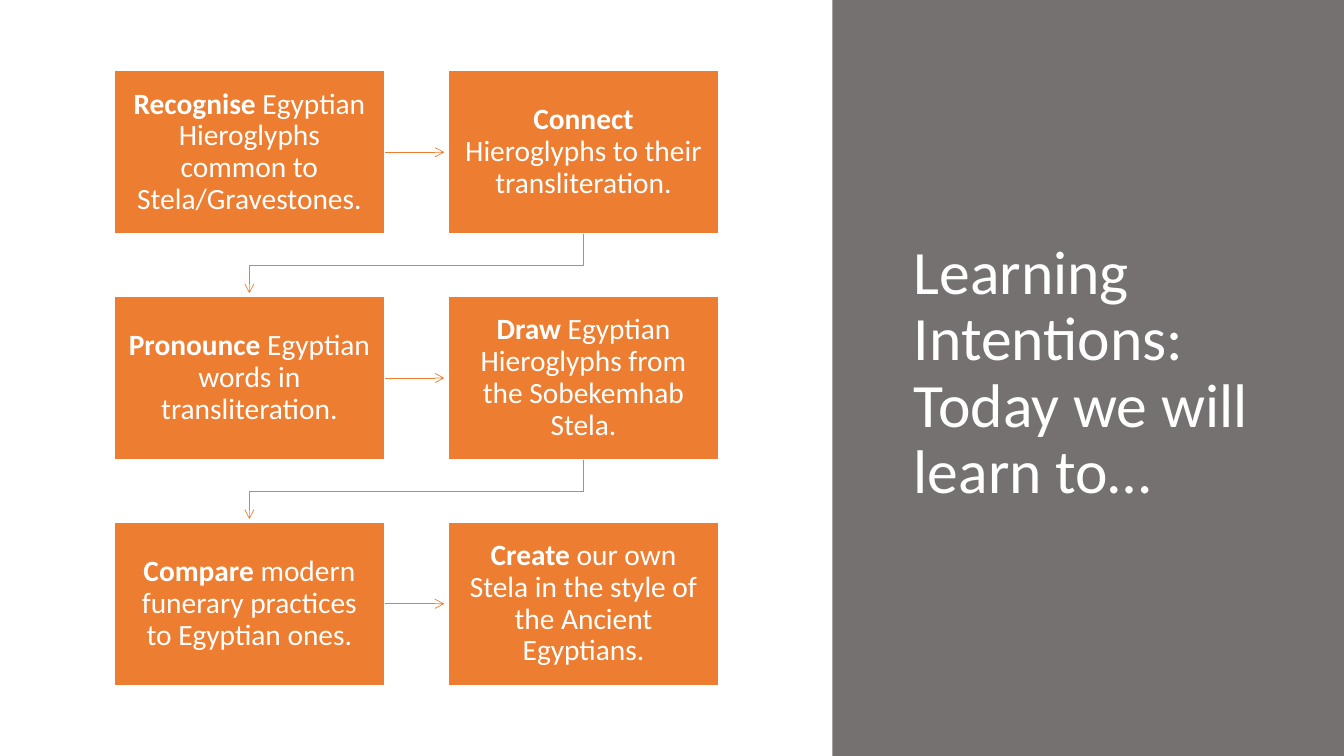
from lxml import etree
from pptx import Presentation, util as u
from pptx.dml import color
from pptx.enum import shapes, text
from pptx.oxml import ns

TITLE = "Learning Intentions: Today we will learn to…"
STEPS = [
    ("Recognise", " Egyptian Hieroglyphs common to Stela/Gravestones."),
    ("Connect", " Hieroglyphs to their transliteration."),
    ("Pronounce", " Egyptian words in transliteration."),
    ("Draw", " Egyptian Hieroglyphs from the Sobekemhab Stela."),
    ("Compare", " modern funerary practices to Egyptian ones."),
    ("Create", " our own Stela in the style of the Ancient Egyptians."),
]
FONT, WHITE, GREY, ORANGE = "Calibri", "FFFFFF", "767171", "ED7D31"
COLS = 2
LEFT, TOP = 2.87, 1.78
WIDE, HIGH = 6.83, 4.11
STEP_X, STEP_Y = 8.42, 5.69
REACH, BEND = 1.5, 0.79


def rgb(code):
    """Turn a hex string into a colour."""
    return color.RGBColor.from_string(code)


def style(para, size):
    """Format a paragraph and its runs."""
    para.line_spacing = 0.9
    for run in para.runs:
        run.font.name, run.font.size = FONT, u.Pt(size)
        run.font.color.rgb = rgb(WHITE)


def block(slide, x, y, w, h, fill):
    """Add a filled rectangle without a shadow."""
    rect = slide.shapes.add_shape(
        shapes.MSO_SHAPE.RECTANGLE, u.Cm(x), u.Cm(y), u.Cm(w), u.Cm(h))
    rect.shadow.inherit = False
    rect.fill.solid()
    rect.fill.fore_color.rgb = rgb(fill)
    rect.line.fill.background()
    return rect


def card(slide, x, y, verb, rest):
    """Add one step with its verb in bold."""
    box = block(slide, x, y, WIDE, HIGH, ORANGE)
    box.line.color.rgb = rgb(WHITE)
    box.line.width = u.Pt(1)
    frame = box.text_frame
    frame.word_wrap = True
    frame.vertical_anchor = text.MSO_ANCHOR.MIDDLE
    frame.margin_left = frame.margin_right = u.Cm(0.33)
    frame.margin_top = frame.margin_bottom = u.Cm(0.36)
    frame.text = verb
    para = frame.paragraphs[0]
    para.alignment = text.PP_ALIGN.CENTER
    para.add_run().text = rest
    style(para, 21)
    para.runs[0].font.bold = True
    return box


def arrow(shape):
    """Draw a shape's line as a thin arrow."""
    shape.line.color.rgb = rgb(ORANGE)
    shape.line.width = u.Pt(0.5)
    etree.SubElement(shape.line._get_or_add_ln(), ns.qn("a:tailEnd"), type="arrow")


def across(slide, box, x, y):
    """Lead from a box to its right neighbour."""
    line = slide.shapes.add_connector(
        shapes.MSO_CONNECTOR.STRAIGHT, u.Cm(x), u.Cm(y), u.Cm(x + REACH), u.Cm(y))
    line.begin_connect(box, 3)
    arrow(line)
    etree.SubElement(line._element.spPr, ns.qn("a:effectLst"))


def down(slide, x, y):
    """Lead from the end of a row to the start of the next."""
    end = x - STEP_X
    turns = [(x, y + BEND), (end, y + BEND), (end, y + REACH)]
    pen = slide.shapes.build_freeform(u.Cm(x), u.Cm(y))
    pen.add_line_segments([(u.Cm(a), u.Cm(b)) for a, b in turns], close=False)
    path = pen.convert_to_shape()
    path.shadow.inherit = False
    path.fill.background()
    arrow(path)


def main():
    """Build the slide."""
    deck = Presentation()
    deck.slide_width, deck.slide_height = u.Cm(33.87), u.Cm(19.05)
    slide = deck.slides.add_slide(deck.slide_layouts[6])
    block(slide, 20.98, 0, 12.89, 19.05, GREY)
    title = slide.shapes.add_textbox(u.Cm(22.78), u.Cm(1.78), u.Cm(10.19), u.Cm(15.29))
    frame = title.text_frame
    frame.word_wrap = True
    frame.vertical_anchor = text.MSO_ANCHOR.MIDDLE
    frame.text = TITLE
    style(frame.paragraphs[0], 44)
    for i, (verb, rest) in enumerate(STEPS):
        row, col = divmod(i, COLS)
        x, y = LEFT + col * STEP_X, TOP + row * STEP_Y
        box = card(slide, x, y, verb, rest)
        if col < COLS - 1:
            across(slide, box, x + WIDE, y + HIGH / 2)
        elif i < len(STEPS) - 1:
            down(slide, x + WIDE / 2, y + HIGH)
    deck.save("out.pptx")


if __name__ == "__main__":
    main()
